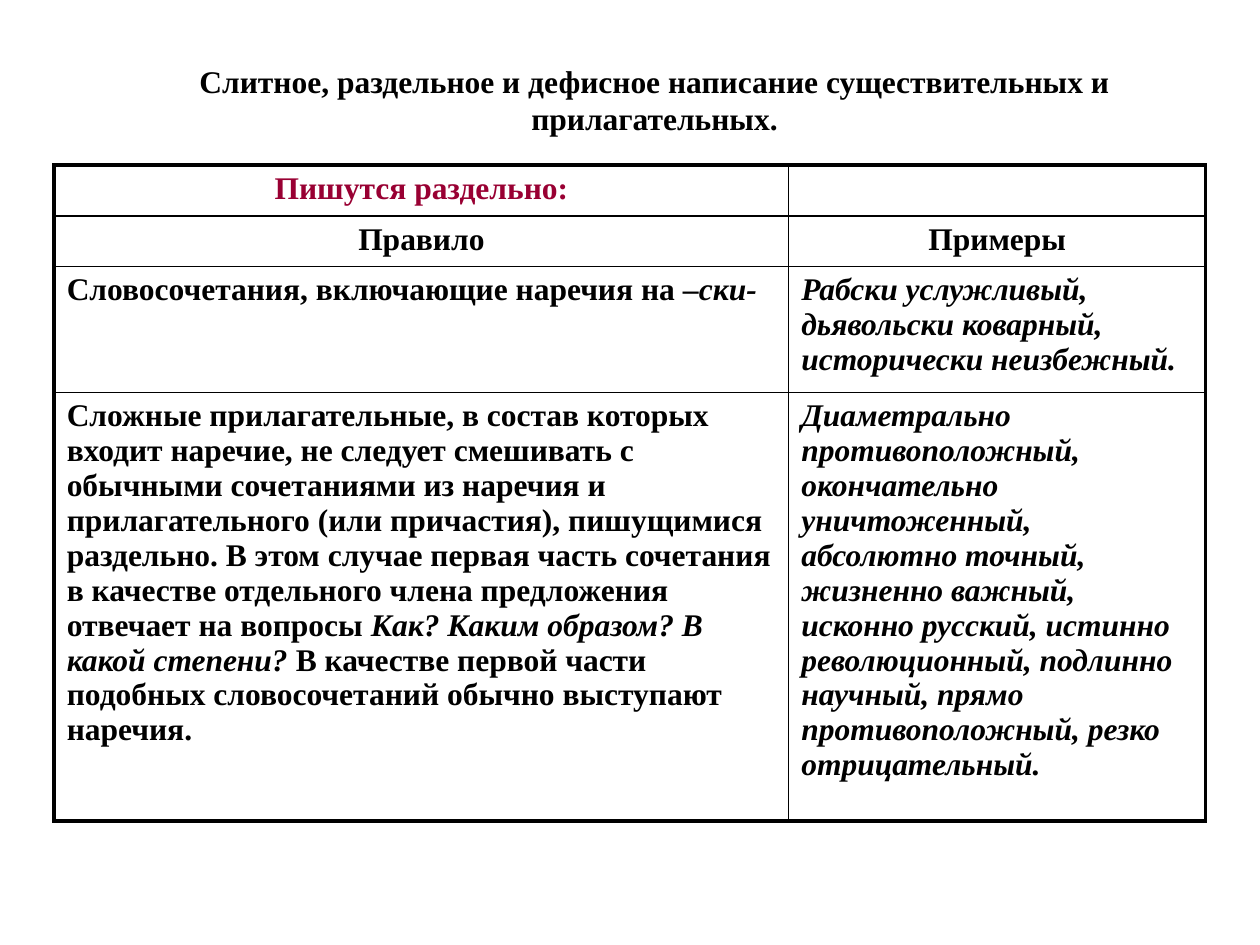
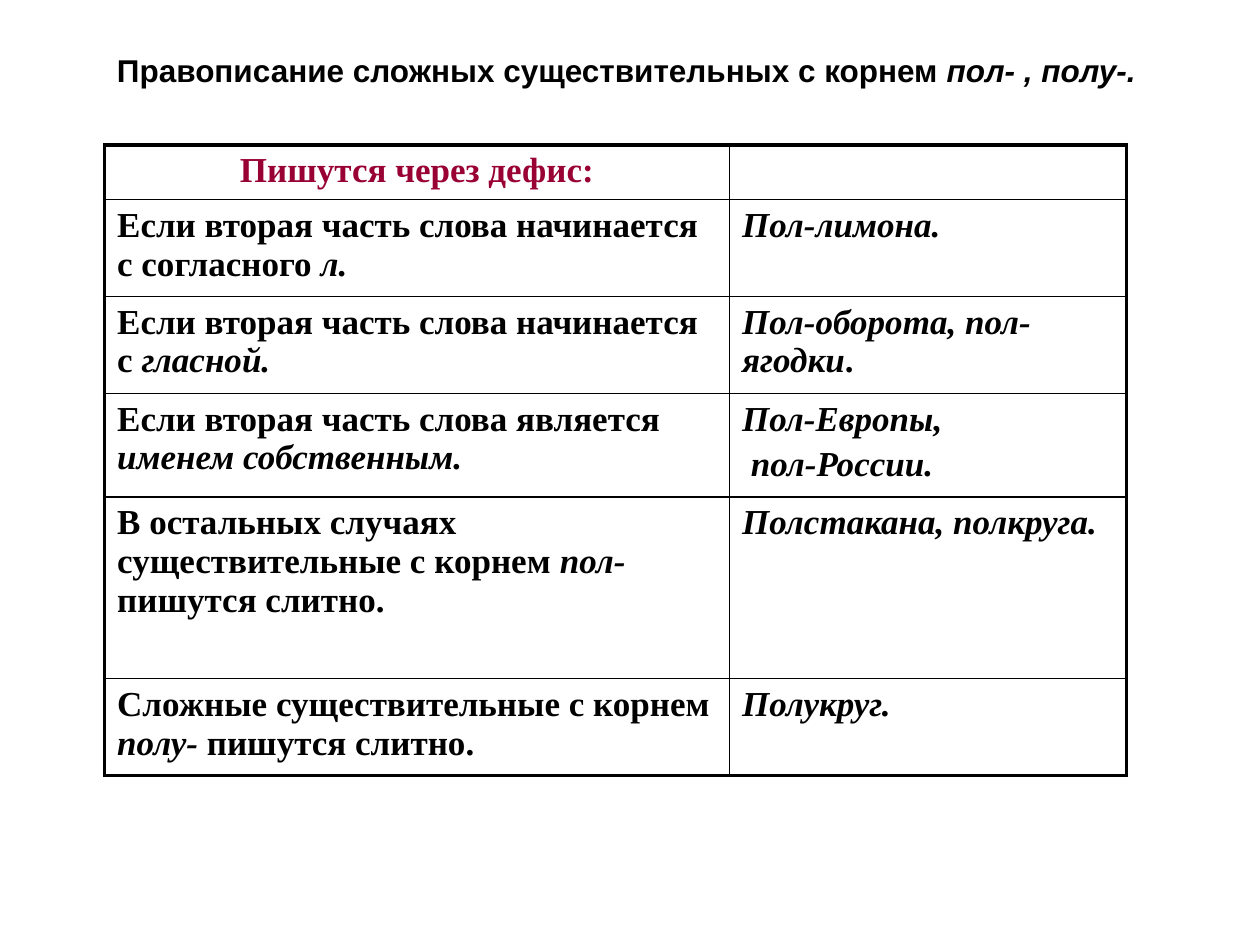
from lxml import etree
from pptx import Presentation
from pptx import util as u
from pptx.dml.color import RGBColor
from pptx.enum import text
from pptx.oxml.ns import qn

COLORS = {"ink": "000000", "heading": "990033"}
SERIF, SANS = "Times New Roman", "Arial"
GRID_COLUMNS, GRID_ROWS = 100, 75
OUTER_LINE, INNER_LINE = u.Pt(2.25), u.Pt(1)


class Lesson:
    """Holds the shared style and the current slide."""

    def __init__(self):
        self.deck = Presentation()
        self.deck.slide_width, self.deck.slide_height = u.Inches(10), u.Inches(7.5)
        self.page = None

    def across(self, columns):
        return round(self.deck.slide_width * columns / GRID_COLUMNS)

    def down(self, rows):
        return round(self.deck.slide_height * rows / GRID_ROWS)

    def new_page(self):
        self.page = self.deck.slides.add_slide(self.deck.slide_layouts[6])

    def fill_text(self, frame, content, size, font=SERIF, color="ink", centered=False):
        """Bold text; parts between asterisks are italic, lines are paragraphs."""
        for index, line in enumerate(content.split("\n")):
            para = frame.add_paragraph() if index else frame.paragraphs[0]
            if index:
                para.space_before = u.Pt(0.2 * size)
            para.alignment = text.PP_ALIGN.CENTER if centered else text.PP_ALIGN.LEFT
            for part, words in enumerate(line.split("*")):
                if not words:
                    continue
                span = para.add_run()
                span.text = words
                span.font.name, span.font.size = font, u.Pt(size)
                span.font.bold, span.font.italic = True, part % 2 == 1
                span.font.color.rgb = RGBColor.from_string(COLORS[color])
            if not line:
                etree.SubElement(para._p, qn("a:endParaRPr"), sz=str(size * 100))

    def title(self, content, left, top, width, height, font, centered=False, wrap=True):
        box = self.page.shapes.add_textbox(
            self.across(left), self.down(top), self.across(width), self.down(height))
        box.text_frame.word_wrap = wrap
        self.fill_text(box.text_frame, content, 18, font, centered=centered)

    def border(self, cell, side, width):
        line = etree.SubElement(cell._tc.get_or_add_tcPr(), qn("a:ln" + side), w=str(width))
        fill = etree.SubElement(line, qn("a:solidFill"))
        etree.SubElement(fill, qn("a:srgbClr"), val=COLORS["ink"])

    def table(self, content, left, top, widths, heights, size, centered_rows):
        """Two-column table with a heavy frame and a coloured heading."""
        frame = self.page.shapes.add_table(
            len(heights), len(widths), self.across(left), self.down(top),
            self.across(sum(widths)), self.down(sum(heights)))
        table = frame.table
        table.first_row = table.horz_banding = False
        for column, width in zip(table.columns, widths):
            column.width = self.across(width)
        for row, height in zip(table.rows, heights):
            row.height = self.down(height)
        last_row, last_column = len(heights) - 1, len(widths) - 1
        for r, line in enumerate(content):
            for c, words in enumerate(line):
                cell = table.cell(r, c)
                edges = {"L": c == 0, "R": c == last_column, "T": r == 0, "B": r == last_row}
                for side, outer in edges.items():
                    self.border(cell, side, OUTER_LINE if outer else INNER_LINE)
                cell.fill.background()
                self.fill_text(cell.text_frame, words, size,
                               color="ink" if r else "heading", centered=r < centered_rows)


def main():
    lesson = Lesson()

    # Words written separately
    lesson.new_page()
    lesson.table([
        ("Пишутся раздельно:", ""),
        ("Правило", "Примеры"),
        ("Словосочетания, включающие наречия на –*ски-*",
         "*Рабски услужливый, дьявольски коварный, исторически неизбежный.*"),
        ("Сложные прилагательные, в состав которых входит наречие, не следует смешивать "
         "с обычными сочетаниями из наречия и прилагательного (или причастия), пишущимися "
         "раздельно. В этом случае первая часть сочетания в качестве отдельного члена "
         "предложения отвечает на вопросы *Как? Каким образом? В какой степени?* В качестве "
         "первой части подобных словосочетаний обычно выступают наречия.",
         "*Диаметрально противоположный, окончательно уничтоженный, абсолютно точный, "
         "жизненно важный, исконно русский, истинно революционный, подлинно научный, "
         "прямо противоположный, резко отрицательный.*"),
    ], 4.3, 13.1, (58.3, 33.1), (4, 4, 10, 34), size=18, centered_rows=2)
    lesson.title("Слитное, раздельное и дефисное написание существительных и прилагательных.",
                 11.4, 4.4, 81.1, 7, SERIF, centered=True)

    # Words with a hyphen
    lesson.new_page()
    lesson.table([
        ("Пишутся через дефис:", ""),
        ("Если вторая часть слова начинается с согласного *л.*", "*Пол-лимона.*"),
        ("Если вторая часть слова начинается с *гласной.*", "*Пол-оборота, пол-ягодки*."),
        ("Если вторая часть слова является *именем собственным.*",
         "*Пол-Европы,*\n* пол-России.*"),
        ("В остальных случаях существительные с корнем *пол- *пишутся слитно.",
         "*Полстакана, полкруга.*"),
        ("Сложные существительные с корнем *полу- *пишутся слитно.", "*Полукруг.*"),
    ], 8.3, 11.5, (49.6, 31.5), (4.3, 7.7, 7.7, 8.2, 14.4, 7.7), size=20, centered_rows=1)
    lesson.title("Правописание сложных существительных с корнем *пол- , полу-.*",
                 8.3, 3.6, 83.1, 4, SANS, wrap=False)

    lesson.deck.save("out.pptx")


if __name__ == "__main__":
    main()
